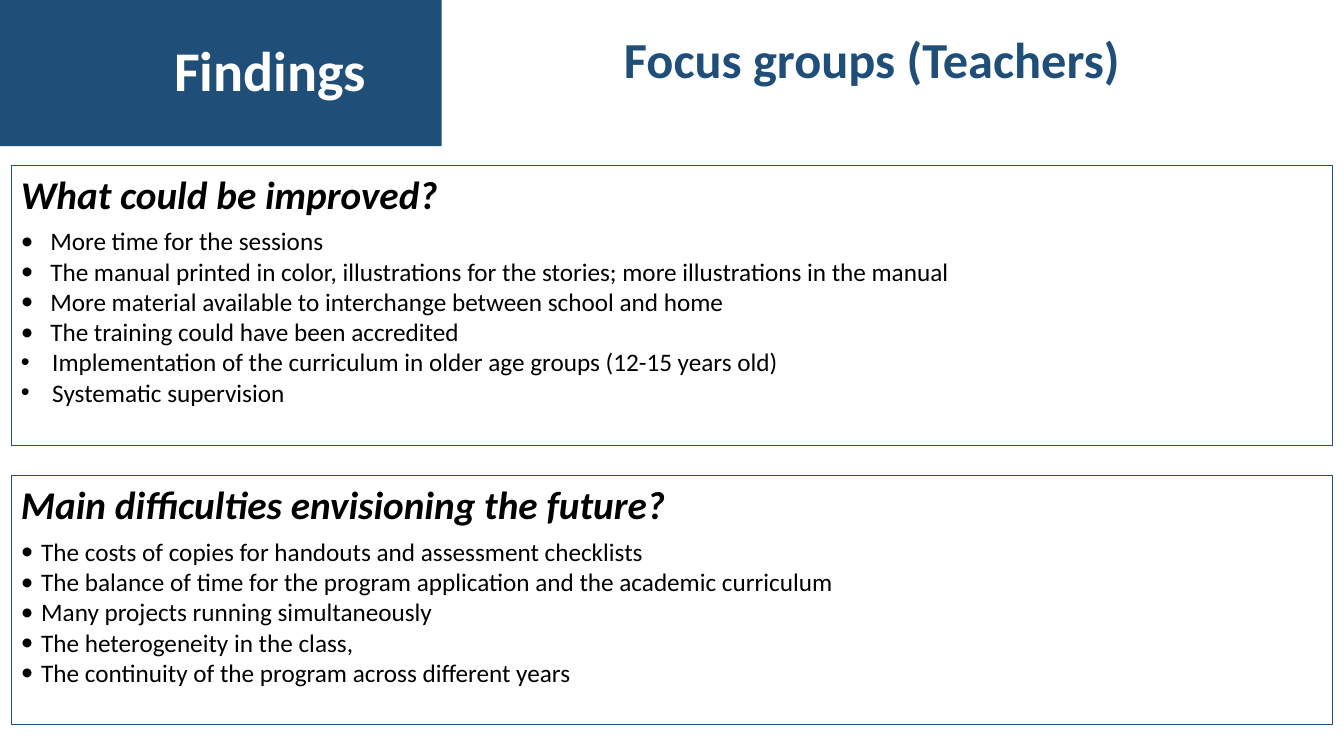
import pptx
import pptx.util
import pptx.dml.color
import pptx.enum.shapes
import pptx.enum.text
from dataclasses import dataclass
from lxml import etree

# Content: heading, then (text, indent in inches, bullet font)
TITLE = "Findings"
SUBTITLE = "Focus groups (Teachers)"
IMPROVEMENTS = ("What could be improved?", [
    ("More time for the sessions", 0.29, "Calibri"),
    ("The manual printed in color, illustrations for the stories; "
     "more illustrations in the manual", 0.29, "Calibri"),
    ("More material available to interchange between school and home", 0.29, "Calibri"),
    ("The training could have been accredited", 0.29, "Calibri"),
    ("Implementation of the curriculum in older age groups (12-15 years old)", 0.31, "Arial"),
    ("Systematic supervision", 0.31, "Arial"),
])
DIFFICULTIES = ("Main difficulties envisioning the future?", [
    (text, 0.2, "Calibri") for text in (
        "The costs of copies for handouts and assessment checklists",
        "The balance of time for the program application and the academic curriculum",
        "Many projects running simultaneously",
        "The heterogeneity in the class,",
        "The continuity of the program across different years",
    )
])


@dataclass(frozen=True)
class Theme:
    font: str = "Calibri"
    navy: str = "1F4E79"
    white: str = "FFFFFF"
    black: str = "000000"
    title: int = 40
    subtitle: int = 36
    heading: int = 28
    body: int = 18


THEME = Theme()
Inches, Pt = pptx.util.Inches, pptx.util.Pt
ALIGN = pptx.enum.text.PP_ALIGN
ANCHOR = pptx.enum.text.MSO_ANCHOR

# Layout in inches
WIDTH, HEIGHT = 13.33, 7.5
BANNER = (0, 0, 4.38, 1.45)
SUBTITLE_BOX = (6.09, 0.23, 5.72, 0.71)
MARGIN = 0.11
PANEL_TOP, PANEL_GAP = 1.64, 0.3
PANEL_HEIGHTS = (2.78, 2.47)


def rgb(value):
    return pptx.dml.color.RGBColor.from_string(value)


def add_run(p, text, size, color, bold=False, italic=False):
    r = p.add_run()
    r.text = text
    f = r.font
    f.name, f.size, f.bold, f.italic = THEME.font, Pt(size), bold, italic
    f.color.rgb = rgb(color)


def add_rect(s, box, fill=None, line=None):
    sp = s.shapes.add_shape(pptx.enum.shapes.MSO_SHAPE.RECTANGLE, *map(Inches, box))
    sp.shadow.inherit = False
    if fill:
        sp.fill.solid()
        sp.fill.fore_color.rgb = rgb(fill)
    else:
        sp.fill.background()
    if line:
        sp.line.color.rgb = rgb(line)
        sp.line.width = Pt(0.75)
    else:
        sp.line.fill.background()
    sp.text_frame.word_wrap = True
    return sp


def set_bullet(p, indent, font):
    pPr = p._p.get_or_add_pPr()
    pPr.set("marL", str(Inches(indent)))
    pPr.set("indent", str(-Inches(indent)))
    for tag, key, value in (("buFont", "typeface", font), ("buChar", "char", "•")):
        etree.SubElement(pPr, pptx.oxml.ns.qn("a:" + tag)).set(key, value)


def add_panel(s, top, height, heading, items):
    sp = add_rect(s, (MARGIN, top, WIDTH - 2 * MARGIN, height), line=THEME.navy)
    tf = sp.text_frame
    tf.vertical_anchor = ANCHOR.TOP
    p = tf.paragraphs[0]
    p.alignment = ALIGN.LEFT
    p.space_after = Pt(6)
    add_run(p, heading, THEME.heading, THEME.black, bold=True, italic=True)
    for text, indent, font in items:
        p = tf.add_paragraph()
        p.alignment = ALIGN.LEFT
        set_bullet(p, indent, font)
        add_run(p, text, THEME.body, THEME.black)


def main():
    prs = pptx.Presentation()
    prs.slide_width, prs.slide_height = Inches(WIDTH), Inches(HEIGHT)
    s = prs.slides.add_slide(prs.slide_layouts[6])

    # Title banner, with its text set right of centre
    tf = add_rect(s, BANNER, fill=THEME.navy).text_frame
    tf.vertical_anchor = ANCHOR.MIDDLE
    tf.margin_left = Inches(1.08)
    p = tf.paragraphs[0]
    p.alignment = ALIGN.CENTER
    p.line_spacing = 0.9
    add_run(p, TITLE, THEME.title, THEME.white, bold=True)

    # Subtitle
    tf = s.shapes.add_textbox(*map(Inches, SUBTITLE_BOX)).text_frame
    tf.word_wrap = True
    add_run(tf.paragraphs[0], SUBTITLE, THEME.subtitle, THEME.navy, bold=True)

    # Stacked panels
    top = PANEL_TOP
    for height, (heading, items) in zip(PANEL_HEIGHTS, (IMPROVEMENTS, DIFFICULTIES)):
        add_panel(s, top, height, heading, items)
        top += height + PANEL_GAP

    prs.save("out.pptx")


if __name__ == "__main__":
    main()
